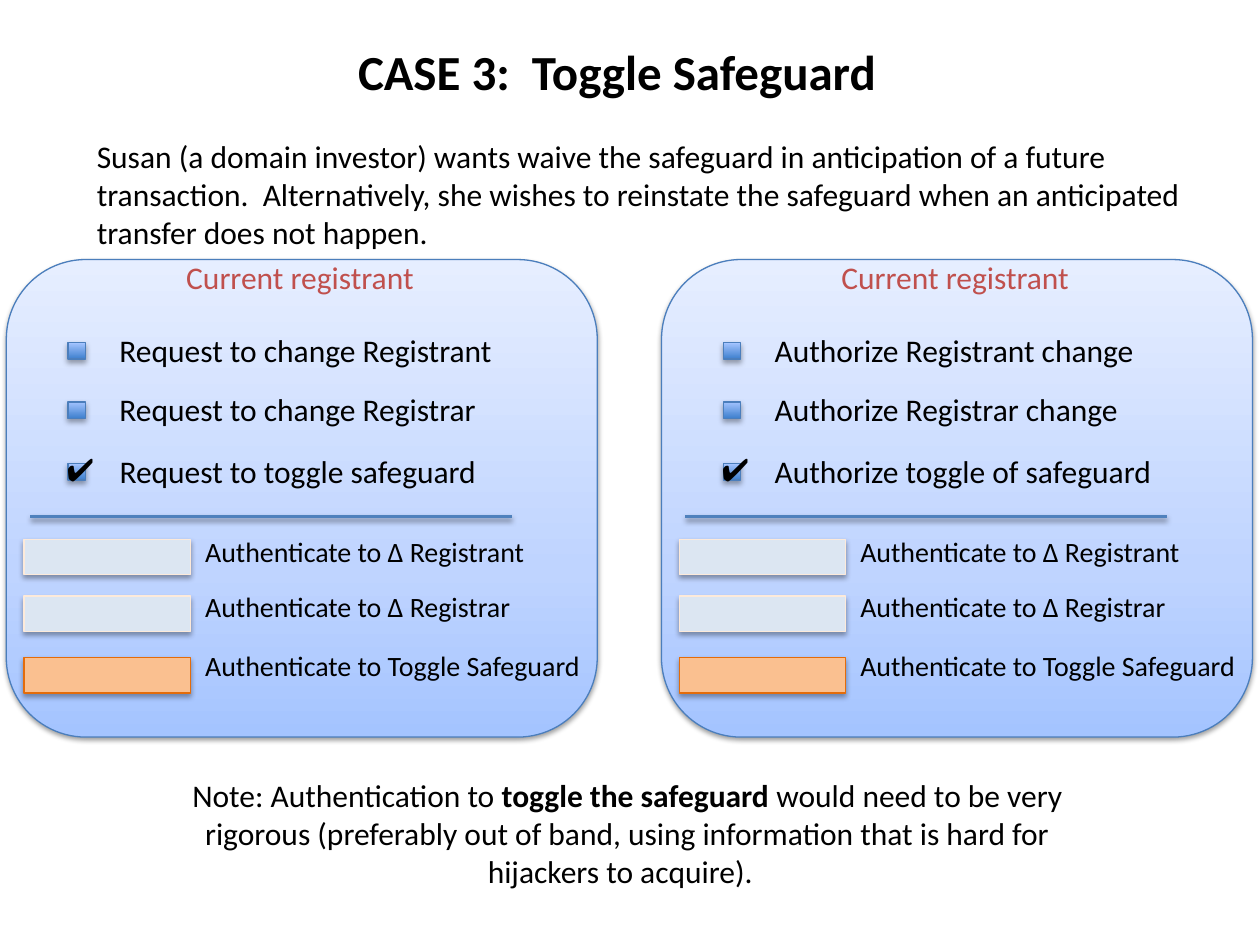
import pptx
import pptx.dml.color
import pptx.enum.shapes
import pptx.enum.text
import pptx.oxml
import pptx.oxml.ns
import pptx.util
from pptx.util import Inches

SHAPES = pptx.enum.shapes.MSO_SHAPE
DRAWING_NS = pptx.oxml.ns.nsdecls("a")
PANEL_GRADIENT = [(0, "A4C4FF"), (35, "BFD4FF"), (100, "E6EEFF")]
CHECKBOX_GRADIENT = [(0, "3F80CE"), (100, "A4C4FF")]


def colour(hex_string):
    return pptx.dml.color.RGBColor.from_string(hex_string)


class SlideBuilder:
    font = "Calibri"
    text_colour = "000000"
    outline = "4B7EBC"

    def __init__(self, slide):
        self.slide = slide

    def add_shadow(self, element, distance, opacity):
        properties = element._element.spPr
        for effects in properties.findall(pptx.oxml.ns.qn("a:effectLst")):
            properties.remove(effects)
        properties.append(pptx.oxml.parse_xml(
            f'<a:effectLst {DRAWING_NS}><a:outerShdw blurRad="{pptx.util.Pt(3.1)}" '
            f'dist="{pptx.util.Pt(distance)}" dir="5400000" rotWithShape="0">'
            f'<a:srgbClr val="000000"><a:alpha val="{opacity * 1000}"/></a:srgbClr>'
            '</a:outerShdw></a:effectLst>'))

    def add_box(self, kind, left, top, width, height, fill, line, distance=1.8, opacity=35):
        """Fill is a hex string, or a list of (percent, hex) stops from the bottom up."""
        shape = self.slide.shapes.add_shape(
            kind, Inches(left), Inches(top), Inches(width), Inches(height))
        if isinstance(fill, str):
            shape.fill.solid()
            shape.fill.fore_color.rgb = colour(fill)
        else:
            shape.fill.gradient()
            shape.fill.gradient_angle = 90
            stops = shape._element.spPr.find(".//" + pptx.oxml.ns.qn("a:gsLst"))
            for stop in list(stops):
                stops.remove(stop)
            for percent, value in fill:
                stops.append(pptx.oxml.parse_xml(
                    f'<a:gs {DRAWING_NS} pos="{percent * 1000}"><a:srgbClr val="{value}"/></a:gs>'))
        shape.line.color.rgb = colour(line)
        shape.line.width = pptx.util.Pt(0.75)
        self.add_shadow(shape, distance, opacity)

    def add_rule(self, start, end, y):
        rule = self.slide.shapes.add_connector(
            pptx.enum.shapes.MSO_CONNECTOR.STRAIGHT,
            Inches(start), Inches(y), Inches(end), Inches(y))
        rule.line.color.rgb = colour("4F81BD")
        rule.line.width = pptx.util.Pt(2)
        self.add_shadow(rule, 1.6, 38)

    def add_text(self, text, left, top, width, height=0.4, size=18, text_colour=None,
                 font=None, wrap=False, centred=False, bold=()):
        """Text is a string or a list of runs; bold lists the indexes of bold runs."""
        box = self.slide.shapes.add_textbox(
            Inches(left), Inches(top), Inches(width), Inches(height))
        frame = box.text_frame
        frame.word_wrap = wrap
        frame.auto_size = pptx.enum.text.MSO_AUTO_SIZE.SHAPE_TO_FIT_TEXT
        paragraph = frame.paragraphs[0]
        if centred:
            paragraph.alignment = pptx.enum.text.PP_ALIGN.CENTER
        for index, part in enumerate([text] if isinstance(text, str) else text):
            run = paragraph.add_run()
            run.text = part
            run.font.name = font or self.font
            run.font.size = pptx.util.Pt(size)
            run.font.bold = index in bold
            run.font.color.rgb = colour(text_colour or self.text_colour)

    def add_panel(self, left, options):
        # Panel and heading
        self.add_box(SHAPES.ROUNDED_RECTANGLE, left, 2.06, 4.69, 3.79,
                     PANEL_GRADIENT, self.outline, 1.6, 38)
        self.add_text("Current registrant", left + 1.33, 2, 2.04, text_colour="C0504D")

        # Options, the last one ticked
        for top, (label, width) in zip((2.72, 3.19, 3.68), options):
            self.add_box(SHAPES.RECTANGLE, left + 0.49, top, 0.14, 0.13,
                         CHECKBOX_GRADIENT, self.outline)
            self.add_text(label, left + 0.8, top - 0.14, width)
        self.add_text("✔", left + 0.38, 3.52, 0.43, font="Arial")
        self.add_rule(left + 4.01, left + 0.19, 4.1)

        # Authentication fields, the last one highlighted
        fields = [
            ("Authenticate to Δ Registrant", 4.19, 4.28, 2.79, "DCE6F2", "FDEADA"),
            ("Authenticate to Δ Registrar", 4.63, 4.73, 2.68, "DCE6F2", "FDEADA"),
            ("Authenticate to Toggle Safeguard", 5.1, 5.22, 3.25, "FAC090", "E46C0A"),
        ]
        for label, label_top, field_top, width, fill, line in fields:
            self.add_text(label, left + 1.48, label_top, width, 0.37, size=16)
            self.add_box(SHAPES.RECTANGLE, left + 0.14, field_top, 1.32, 0.28, fill, line)


def main():
    presentation = pptx.Presentation()
    presentation.slide_width = Inches(10)
    presentation.slide_height = Inches(7.5)
    builder = SlideBuilder(presentation.slides.add_slide(presentation.slide_layouts[6]))

    # Title and scenario
    builder.add_text("CASE 3:  Toggle Safeguard ", 0.68, 0.28, 8.52, 0.57, size=28,
                     wrap=True, centred=True, bold=(0,))
    builder.add_text(
        "Susan (a domain investor) wants waive the safeguard in anticipation of a future "
        "transaction.  Alternatively, she wishes to reinstate the safeguard when an "
        "anticipated transfer does not happen.", 0.67, 1.04, 8.94, 1.01, wrap=True)

    # Request and authorization panels
    panels = [
        [("Request to change Registrant", 3.33), ("Request to change Registrar", 3.2),
         ("Request to toggle safeguard", 3.08)],
        [("Authorize Registrant change", 3.1), ("Authorize Registrar change", 2.97),
         ("Authorize toggle of safeguard", 3.24)],
    ]
    for index, options in enumerate(panels):
        builder.add_panel(0.05 + 5.2 * index, options)

    # Closing note
    builder.add_text(
        ["Note: Authentication to ", "toggle the safeguard",
         " would need to be very rigorous (preferably out of band, using information "
         "that is hard for hijackers to acquire).  "],
        1.3, 6.11, 7.36, 1.01, wrap=True, centred=True, bold=(1,))

    presentation.save("out.pptx")


if __name__ == "__main__":
    main()
